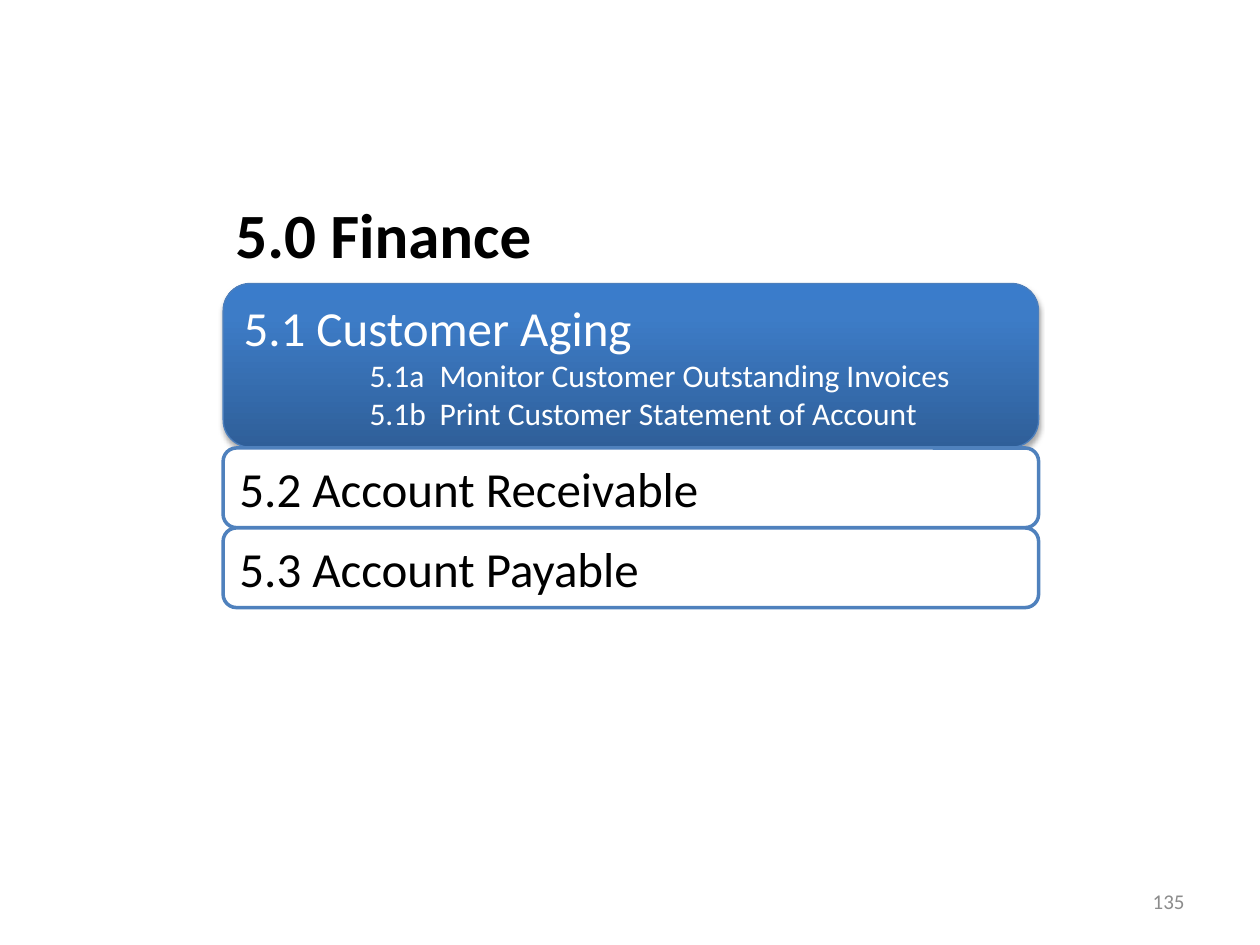
import pptx
import pptx.dml.color
import pptx.enum.shapes
import pptx.enum.text
import pptx.oxml
import pptx.oxml.ns
import pptx.util

Pt = pptx.util.Pt
ALIGN = pptx.enum.text.PP_ALIGN
ANCHOR = pptx.enum.text.MSO_ANCHOR
NS = pptx.oxml.ns.nsdecls("a")


def color(value):
    return pptx.dml.color.RGBColor.from_string(value)


class Agenda:
    font = "Calibri"
    left = 127.5
    width = 466

    def __init__(self, deck):
        self.slide = deck.slides.add_slide(deck.slide_layouts[6])

    def add_text(self, paragraph, text, size, ink, bold=False):
        run = paragraph.add_run()
        run.text = text
        run.font.name = self.font
        run.font.size = Pt(size)
        run.font.bold = bold
        run.font.color.rgb = color(ink)

    def label(self, box, text, size, ink, bold=False, align=ALIGN.LEFT,
              anchor=ANCHOR.TOP, wrap=True):
        frame = self.slide.shapes.add_textbox(*map(Pt, box)).text_frame
        frame.word_wrap = wrap
        frame.vertical_anchor = anchor
        frame.paragraphs[0].alignment = align
        self.add_text(frame.paragraphs[0], text, size, ink, bold)

    def panel(self, top, height, heading, ink, border, weight):
        panel = self.slide.shapes.add_shape(
            pptx.enum.shapes.MSO_SHAPE.ROUNDED_RECTANGLE,
            Pt(self.left), Pt(top), Pt(self.width), Pt(height))
        panel.shadow.inherit = False
        panel.fill.solid()
        panel.fill.fore_color.rgb = color("FFFFFF")
        panel.line.color.rgb = color(border)
        panel.line.width = Pt(weight)
        frame = panel.text_frame
        frame.word_wrap = True
        frame.vertical_anchor = ANCHOR.TOP
        frame.paragraphs[0].alignment = ALIGN.LEFT
        self.add_text(frame.paragraphs[0], heading, 28, ink)
        return panel

    def highlight(self, panel, stops):
        panel.fill.gradient()
        panel.fill.gradient_angle = 90
        properties = panel.element.spPr
        stop_list = properties.find(".//" + pptx.oxml.ns.qn("a:gsLst"))
        for stop in list(stop_list):
            stop_list.remove(stop)
        for position, value in stops:
            stop_list.append(pptx.oxml.parse_xml(
                f'<a:gs {NS} pos="{position * 1000}"><a:srgbClr val="{value}"/></a:gs>'))
        properties.find(pptx.oxml.ns.qn("a:effectLst")).append(pptx.oxml.parse_xml(
            f'<a:outerShdw {NS} blurRad="{Pt(3.1)}" dist="{Pt(1.8)}" dir="5400000" '
            'rotWithShape="0"><a:srgbClr val="000000"><a:alpha val="35000"/>'
            '</a:srgbClr></a:outerShdw>'))

    def subitem(self, panel, number, text, ink):
        paragraph = panel.text_frame.add_paragraph()
        paragraph.alignment = ALIGN.LEFT
        properties = paragraph._p.get_or_add_pPr()
        properties.set("marL", str(Pt(112)))
        properties.set("indent", str(Pt(-40)))
        properties.append(pptx.oxml.parse_xml(
            f'<a:tabLst {NS}><a:tab pos="{Pt(112)}" algn="l"/></a:tabLst>'))
        self.add_text(paragraph, f"{number}\t{text}", 18, ink)


def main():
    deck = pptx.Presentation()
    deck.slide_width, deck.slide_height = Pt(720), Pt(540)
    agenda = Agenda(deck)
    agenda.label((516, 500.5, 168, 28.75), "135", 12, "8C8C8C",
                 align=ALIGN.RIGHT, anchor=ANCHOR.MIDDLE)
    agenda.label((agenda.left, 108, 186, 51), "5.0 Finance", 36, "000000",
                 bold=True, wrap=False)

    current = agenda.panel(162, 93.6, "5.1 Customer Aging", "FFFFFF", "4B7EBC", 0.75)
    agenda.highlight(current, [(0, "2F5F99"), (80, "3D7CC7"), (100, "3A7CCB")])
    agenda.subitem(current, "5.1a", "Monitor Customer Outstanding Invoices", "FFFFFF")
    agenda.subitem(current, "5.1b", "Print Customer Statement of Account", "FFFFFF")

    for row, heading in enumerate(["5.2 Account Receivable", "5.3 Account Payable"]):
        agenda.panel(256 + row * 45.7, 45.5, heading, "000000", "4F81BD", 2)

    deck.save("out.pptx")


if __name__ == "__main__":
    main()
